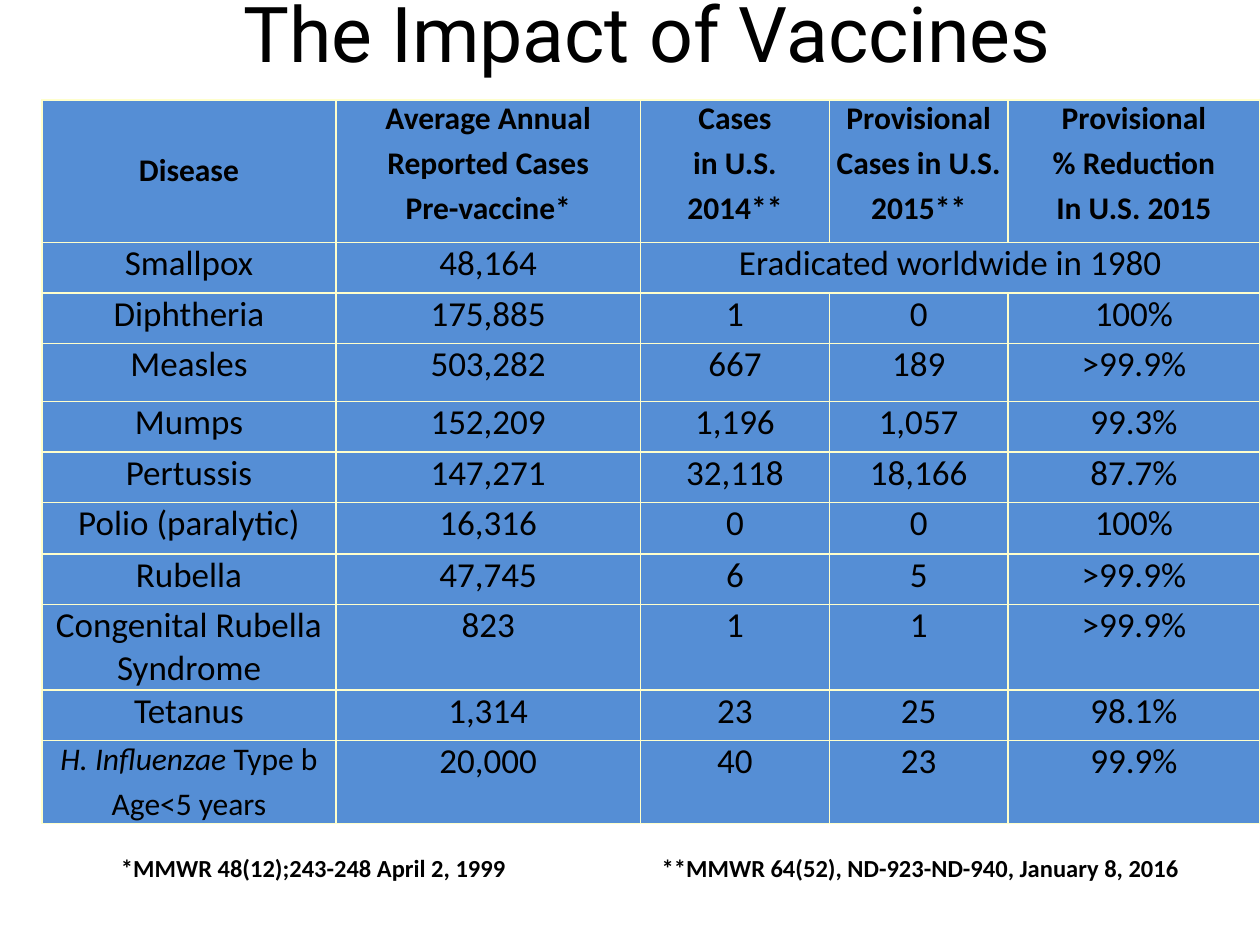
from dataclasses import dataclass

from lxml.etree import SubElement
from pptx import Presentation
from pptx.dml.color import RGBColor
from pptx.enum.text import MSO_ANCHOR as Anchor, MSO_AUTO_SIZE as AutoSize, PP_ALIGN as Align
from pptx.oxml.ns import qn
from pptx.util import Pt


@dataclass(frozen=True)
class Theme:
    text: str = "000000"
    cell: str = "558ED5"
    border: str = "FFFFCC"
    title_font: str = "Roboto"
    body_font: str = "Calibri"
    title_size: int = 44
    header_size: int = 18
    body_size: int = 20
    note_size: int = 14


THEME = Theme()

COLUMN_WIDTHS = (168, 174, 108, 102, 144)
ROW_HEIGHT = 28.9
HEADER_HEIGHT = 81.5
SPECIAL_HEIGHTS = {"Measles": 33.1, "Polio (paralytic)": 29.5,
                   "Congenital Rubella Syndrome": 48.8}
HEADERS = (
    "Disease",
    "Average Annual\nReported Cases\nPre-vaccine*",
    "Cases\nin U.S.\n2014**",
    "Provisional\nCases in U.S.\n2015**",
    "Provisional\n% Reduction\nIn U.S. 2015",
)
DISEASES = (
    ("Smallpox", "48,164", "Eradicated worldwide in 1980"),
    ("Diphtheria", "175,885", "1", "0", "100%"),
    ("Measles", "503,282", "667", "189", ">99.9%"),
    ("Mumps", "152,209", "1,196", "1,057", "99.3%"),
    ("Pertussis", "147,271", "32,118", "18,166", "87.7%"),
    ("Polio (paralytic)", "16,316", "0", "0", "100%"),
    ("Rubella", "47,745", "6", "5", ">99.9%"),
    ("Congenital Rubella Syndrome", "823", "1", "1", ">99.9%"),
    ("Tetanus", "1,314", "23", "25", "98.1%"),
    ("H. Influenzae Type b\nAge<5 years", "20,000", "40", "23", "99.9%"),
)
SPECIES = "H. Influenzae "
SPECIES_ROW_HEIGHT = 47.4


def format_text(text_frame, size, font=THEME.body_font, bold=False, align=Align.CENTER):
    """Style every run, with a gap of 20% of the type size between paragraphs."""
    for index, paragraph in enumerate(text_frame.paragraphs):
        paragraph.alignment = align
        if index:
            paragraph.space_before = Pt(size * 0.2)
        for run in paragraph.runs:
            run.font.name = font
            run.font.size = Pt(size)
            run.font.bold = bold
            run.font.color.rgb = RGBColor.from_string(THEME.text)


def add_borders(cell):
    properties = cell._tc.get_or_add_tcPr()
    for side in ("lnL", "lnR", "lnT", "lnB"):
        line = SubElement(properties, qn(f"a:{side}"), w=str(Pt(1)))
        fill = SubElement(line, qn("a:solidFill"))
        SubElement(fill, qn("a:srgbClr"), val=THEME.border)


def style_cell(cell):
    cell.margin_left = cell.margin_right = cell.margin_top = cell.margin_bottom = 0
    add_borders(cell)
    cell.fill.solid()
    cell.fill.fore_color.rgb = RGBColor.from_string(THEME.cell)


def italicize_start(paragraph, start):
    """Split the paragraph after start and set that part in italics."""
    rest = paragraph.text.removeprefix(start)
    paragraph.text = start
    paragraph.runs[0].font.italic = True
    paragraph.add_run().text = rest


def add_disease_table(slide):
    rows = (HEADERS, *DISEASES)
    heights = [HEADER_HEIGHT] + [SPECIAL_HEIGHTS.get(row[0], ROW_HEIGHT) for row in DISEASES]
    heights[-1] = SPECIES_ROW_HEIGHT
    table = slide.shapes.add_table(
        len(rows), len(COLUMN_WIDTHS), Pt(24), Pt(57),
        Pt(sum(COLUMN_WIDTHS)), Pt(sum(heights))).table
    table.first_row = table.horz_banding = False
    for column, width in zip(table.columns, COLUMN_WIDTHS):
        column.width = Pt(width)
    for row, height in zip(table.rows, heights):
        row.height = Pt(height)
    for cell in table.iter_cells():
        style_cell(cell)

    for row_index, values in enumerate(rows):
        is_header = row_index == 0
        for column_index, value in enumerate(values):
            text_frame = table.cell(row_index, column_index).text_frame
            text_frame.text = value
            if value.startswith(SPECIES):
                italicize_start(text_frame.paragraphs[0], SPECIES)
            small = is_header or value.startswith(SPECIES)
            size = THEME.header_size if small else THEME.body_size
            format_text(text_frame, size, bold=is_header)
    table.cell(0, 0).vertical_anchor = Anchor.MIDDLE
    table.cell(1, 2).merge(table.cell(1, 4))


def place_title(slide, text):
    title = slide.shapes.title
    title.left, title.top, title.width, title.height = Pt(82), Pt(-12), Pt(576), Pt(60)
    text_frame = title.text_frame
    text_frame.text = text
    text_frame.vertical_anchor = Anchor.TOP
    text_frame.auto_size = AutoSize.SHAPE_TO_FIT_TEXT
    format_text(text_frame, THEME.title_size, THEME.title_font)


def add_note(slide, text, left, width):
    text_frame = slide.shapes.add_textbox(Pt(left), Pt(484), Pt(width), Pt(24)).text_frame
    text_frame.word_wrap = True
    text_frame.auto_size = AutoSize.SHAPE_TO_FIT_TEXT
    text_frame.text = text
    format_text(text_frame, THEME.note_size, bold=True, align=Align.LEFT)


def main():
    presentation = Presentation()
    presentation.slide_width, presentation.slide_height = Pt(720), Pt(540)
    slide = presentation.slides.add_slide(presentation.slide_layouts[5])
    place_title(slide, "The Impact of Vaccines")
    add_disease_table(slide)
    add_note(slide, "*MMWR 48(12);243-248 April 2, 1999", 62, 262)
    add_note(slide, "**MMWR 64(52), ND-923-ND-940, January 8, 2016", 371, 312)
    presentation.save("out.pptx")


if __name__ == "__main__":
    main()
